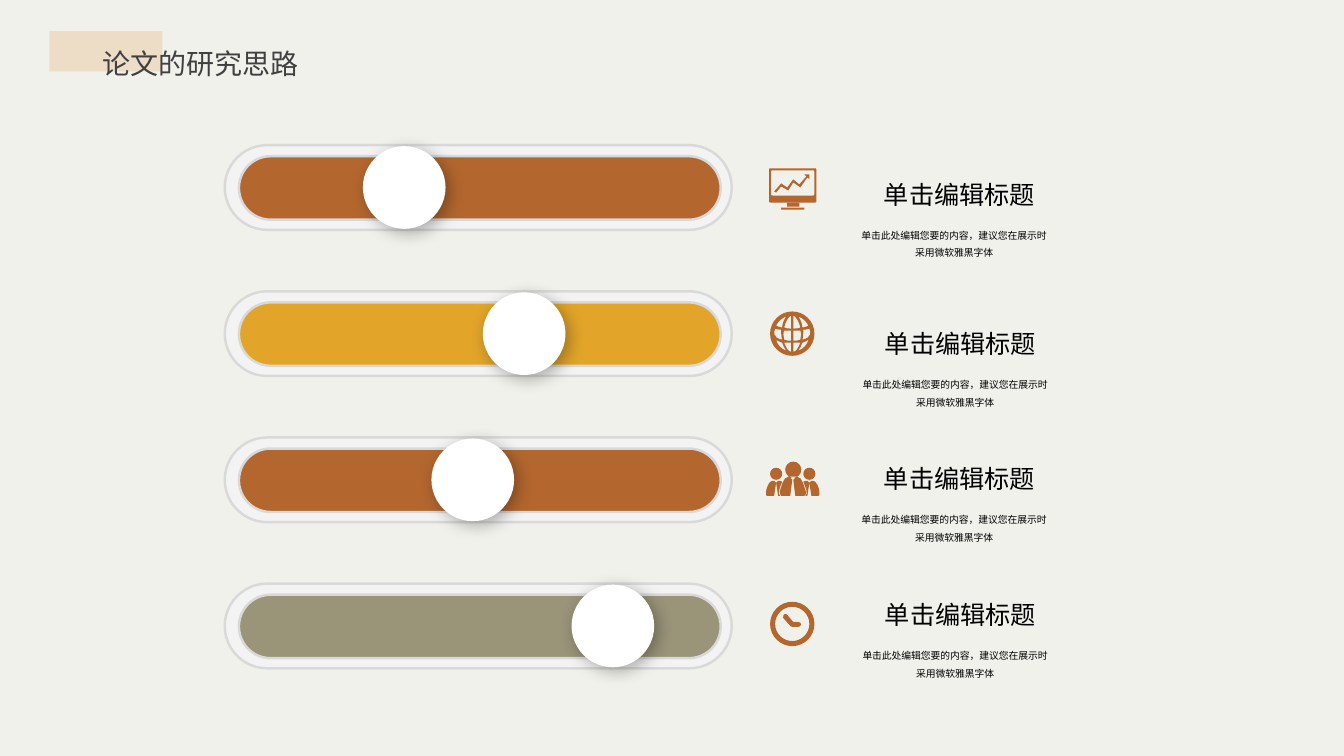
from lxml import etree
from pptx import Presentation
from pptx import util as u
from pptx.dml.color import RGBColor
from pptx.enum import shapes, text
from pptx.oxml import ns

PAPER = RGBColor(0xF1, 0xF1, 0xEB)
SAND = RGBColor(0xED, 0xDD, 0xC6)
TRACK = RGBColor(0xF3, 0xF3, 0xF3)
RIM = RGBColor(0xD9, 0xD9, 0xD9)
RUST = RGBColor(0xB3, 0x67, 0x2E)
AMBER = RGBColor(0xE2, 0xA5, 0x2A)
OLIVE = RGBColor(0x9A, 0x94, 0x79)
WHITE = RGBColor(0xFF, 0xFF, 0xFF)
BLACK = RGBColor(0, 0, 0)
CHARCOAL = RGBColor(0x40, 0x40, 0x40)
FONT = "Noto Sans CJK SC"
HEADING = "单击编辑标题"
ADVICE = "单击此处编辑您要的内容，建议您在展示时采用微软雅黑字体"

ROW_TOP, ROW_PITCH = 1.44, 1.45
ROWS = [
    (RUST, 3.6, 8.67, 1.73),
    (AMBER, 4.79, 8.68, 3.21),
    (RUST, 4.28, 8.67, 4.55),
    (OLIVE, 5.67, 8.68, 5.9),
]


def circle(x, y, r):
    k = 0.55 * r
    return [(x, y - r), (x + k, y - r, x + r, y - k, x + r, y), (x + r, y + k, x + k, y + r, x, y + r),
            (x - k, y + r, x - r, y + k, x - r, y), (x - r, y - k, x - k, y - r, x, y - r)]


def panel(left, top, right, bottom, r):
    return [(left + r, top), (right - r, top), (right, top, right, top, right, top + r),
            (right, bottom - r), (right, bottom, right, bottom, right - r, bottom),
            (left + r, bottom), (left, bottom, left, bottom, left, bottom - r),
            (left, top + r), (left, top, left, top, left + r, top)]


def pairs(step):
    return list(zip(step[::2], step[1::2]))


def place(contour, dx=0, dy=0, flip=1):
    return [tuple(n for x, y in pairs(step) for n in (dx + flip * x, dy + y)) for step in contour]


def write(box, words, size=18, color=BLACK, align=text.PP_ALIGN.CENTER, spacing=1.0, wrap=True):
    frame = box.text_frame
    frame.word_wrap = wrap
    frame.auto_size = text.MSO_AUTO_SIZE.SHAPE_TO_FIT_TEXT
    paragraph = frame.paragraphs[0]
    paragraph.alignment = align
    paragraph.line_spacing = spacing
    run = paragraph.add_run()
    run.text = words
    run.font.size = u.Pt(size)
    run.font.name = FONT
    run.font.color.rgb = color
    etree.SubElement(run.font._element, ns.qn("a:ea"), typeface=FONT)


class Deck:
    """Holds the style and the current slide."""

    def __init__(self):
        self.show = Presentation()
        self.show.slide_width, self.show.slide_height = u.Inches(40 / 3), u.Inches(7.5)
        self.slide = self.show.slides.add_slide(self.show.slide_layouts[6])
        self.slide.background.fill.solid()
        self.slide.background.fill.fore_color.rgb = PAPER

    def paint(self, shape, fill, line=None):
        shape.shadow.inherit = False
        shape.fill.solid()
        shape.fill.fore_color.rgb = fill
        if line is None:
            shape.line.fill.background()
        else:
            shape.line.color.rgb = line
            shape.line.width = u.Pt(1.75)
        return shape

    def block(self, kind, at, fill, line=None):
        shape = self.slide.shapes.add_shape(kind, *map(u.Inches, at))
        return self.paint(shape, fill, line)

    def pill(self, at, fill):
        self.block(shapes.MSO_SHAPE.ROUNDED_RECTANGLE, at, fill, RIM).adjustments[0] = 0.5

    def knob(self, left, top):
        disc = self.block(shapes.MSO_SHAPE.OVAL, (left, top, 0.82, 0.82), WHITE)
        effects = disc._element.spPr.find(ns.qn("a:effectLst"))
        shadow = etree.SubElement(effects, ns.qn("a:outerShdw"), blurRad=str(u.Pt(12)),
                                  dist=str(u.Pt(4)), dir="2700000", algn="tl", rotWithShape="0")
        black = etree.SubElement(shadow, ns.qn("a:srgbClr"), val="000000")
        etree.SubElement(black, ns.qn("a:alpha"), val="30000")

    def outline(self, *contours):
        builder = None
        for start, *steps in contours:
            origin = tuple(map(u.Inches, start))
            if builder is None:
                builder = self.slide.shapes.build_freeform(*origin)
            else:
                builder.move_to(*origin)
            builder.add_line_segments([(u.Inches(x), u.Inches(y)) for s in steps for x, y in pairs(s)])
        shape = self.paint(builder.convert_to_shape(), RUST)
        lines = shape._element.iter(ns.qn("a:lnTo"))
        for drawn, step in zip([*self.grouped(list(lines), contours)],
                               [s for _, *steps in contours for s in steps]):
            if len(step) == 6:
                self.bend(drawn)
        return shape

    def grouped(self, lines, contours):
        position = 0
        for _, *steps in contours:
            for step in steps:
                size = len(step) // 2
                yield lines[position:position + size]
                position += size

    def bend(self, lines):
        bezier = etree.Element(ns.qn("a:cubicBezTo"))
        lines[0].addprevious(bezier)
        for line in lines:
            bezier.append(line[0])
            line.getparent().remove(line)

    def label(self, at, words, **style):
        box = self.slide.shapes.add_textbox(*map(u.Inches, at))
        write(box, words, **style)
        return box

    def group(self, *members):
        self.slide.shapes.add_group_shape(members)

    def caption(self, left, top):
        self.group(self.label((left, top, 1.7, 0.4), HEADING, wrap=False),
                   self.label((left - 0.26, top + 0.44, 2.11, 0.43), ADVICE, size=7, spacing=1.5))

    def monitor(self):
        trend = [(8.03, 1.73), (7.98, 1.73), (8, 1.75), (7.93, 1.83), (7.87, 1.78), (7.81, 1.86),
                 (7.75, 1.82), (7.68, 1.9), (7.7, 1.91), (7.75, 1.85), (7.82, 1.89), (7.87, 1.81),
                 (7.94, 1.86), (8.01, 1.76), (8.03, 1.78)]
        bar = shapes.MSO_SHAPE.RECTANGLE
        self.group(self.outline(panel(7.65, 1.69, 8.08, 1.94, 0.02), panel(7.63, 1.67, 8.1, 2.01, 0.02)),
                   self.block(bar, (7.81, 2.01, 0.12, 0.04), RUST),
                   self.block(bar, (7.75, 2.06, 0.23, 0.02), RUST),
                   self.outline(trend))

    def globe(self, x=7.86, y=3.31):
        windows = [
            [(.01, -.18), (.04, -.17, .07, -.11, .08, -.06), (.06, -.05, .04, -.05, .01, -.05)],
            [(.01, -.03), (.04, -.03, .06, -.03, .08, -.03), (.09, -.01, .09, .03, .08, .06),
             (.06, .07, .04, .07, .01, .07)],
            [(.01, .18), (.01, .09), (.04, .09, .06, .09, .08, .09), (.06, .14, .04, .18, .01, .18)],
            [(.06, -.17), (.11, -.15, .14, -.12, .16, -.08), (.15, -.07, .14, -.07, .1, -.06),
             (.1, -.1, .08, -.14, .06, -.17)],
            [(.1, .06), (.11, .03, .11, -.01, .11, -.04), (.14, -.04, .16, -.04, .17, -.05),
             (.18, -.02, .2, .04, .1, .06)],
            [(.06, .17), (.08, .14, .09, .12, .1, .09), (.13, .08, .15, .07, .16, .06),
             (.15, .11, .11, .15, .06, .17)],
        ]
        panes = [place(window, x, y, flip) for window in windows for flip in (1, -1)]
        self.outline(*panes, circle(x, y, 0.22))

    def people(self, axis=7.865):
        leader = [(7.82, 4.73), (7.77, 4.73, 7.75, 4.84, 7.74, 4.86),
                  (7.73, 4.9, 7.75, 4.92, 7.75, 4.92), (7.84, 4.92), (7.86, 4.76), (7.84, 4.74),
                  (7.89, 4.74), (7.87, 4.76), (7.89, 4.92), (7.98, 4.92),
                  (7.98, 4.92, 8.01, 4.9, 7.99, 4.86), (7.98, 4.84, 7.96, 4.73, 7.91, 4.73)]
        helper = [(7.66, 4.77), (7.63, 4.77, 7.6, 4.85, 7.6, 4.88),
                  (7.59, 4.91, 7.61, 4.92, 7.61, 4.92), (7.68, 4.92), (7.7, 4.79), (7.68, 4.77),
                  (7.72, 4.77), (7.7, 4.79), (7.72, 4.92), (7.74, 4.92),
                  (7.73, 4.91, 7.72, 4.89, 7.73, 4.86), (7.74, 4.83, 7.75, 4.8, 7.76, 4.78),
                  (7.74, 4.77)]
        head = circle(7.7, 4.7, 0.06)
        self.group(self.outline(circle(7.87, 4.66, 0.08), leader),
                   self.outline(head, helper),
                   self.outline(place(head, 2 * axis, 0, -1), place(helper, 2 * axis, 0, -1)))

    def clock(self, x=7.86, y=6.19):
        hands = [(7.79, 6.09), (7.78, 6.09, 7.76, 6.11, 7.77, 6.13), (7.84, 6.21),
                 (7.85, 6.21, 7.85, 6.22, 7.86, 6.22), (7.92, 6.22),
                 (7.95, 6.22, 7.96, 6.17, 7.92, 6.17), (7.87, 6.17), (7.81, 6.1),
                 (7.81, 6.1, 7.8, 6.09, 7.79, 6.09)]
        self.outline(hands, circle(x, y, 0.17), circle(x, y, 0.22))


def main():
    deck = Deck()
    deck.block(shapes.MSO_SHAPE.RECTANGLE, (0.49, 0.31, 1.12, 0.4), SAND)
    deck.label((0.92, 0.25, 3.5, 0.55), "论文的研究思路", size=20, color=CHARCOAL,
               align=text.PP_ALIGN.JUSTIFY, spacing=1.5)
    for row, (color, knob_left, _, _) in enumerate(ROWS):
        top = ROW_TOP + row * ROW_PITCH
        deck.pill((2.23, top, 5.03, 0.84), TRACK)
        deck.pill((2.37, top + 0.11, 4.78, 0.63), color)
        deck.knob(knob_left, top + 0.01)
    deck.monitor()
    deck.globe()
    deck.people()
    deck.clock()
    for _, _, left, top in ROWS:
        deck.caption(left, top)
    deck.show.save("out.pptx")


if __name__ == "__main__":
    main()
